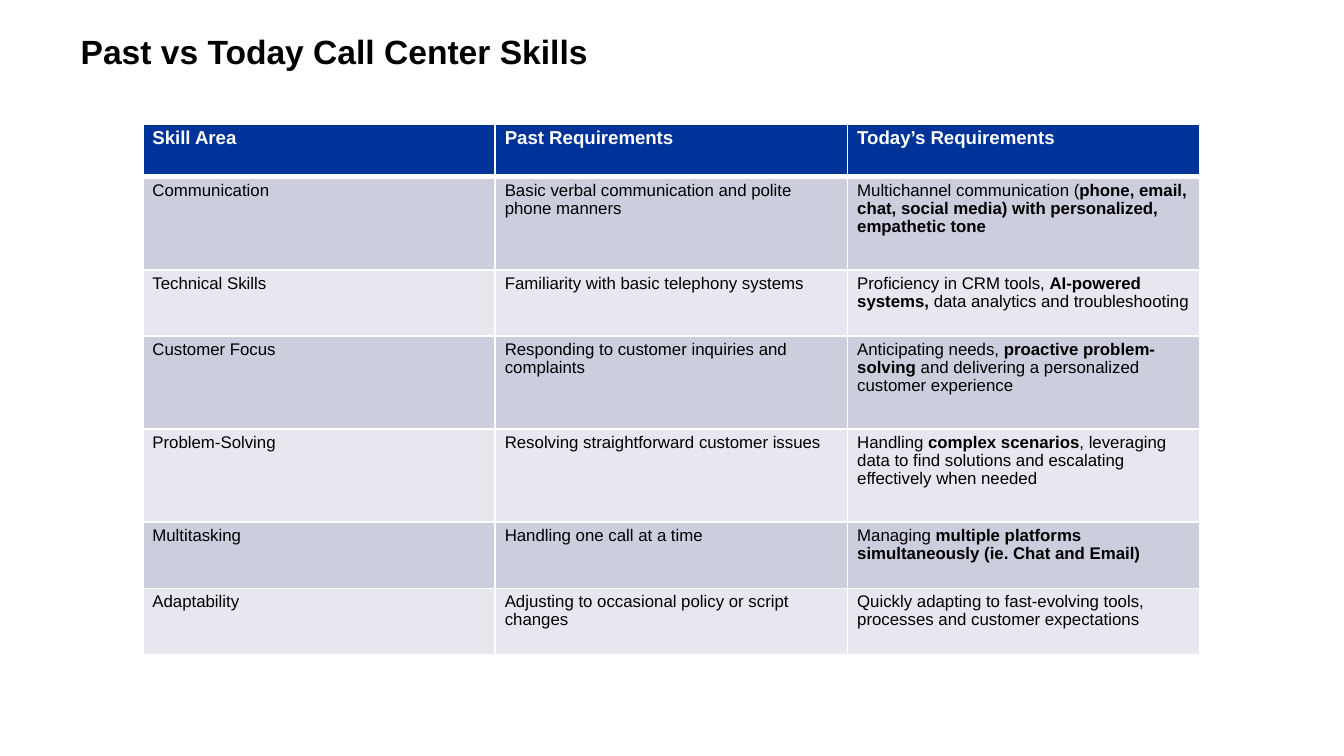
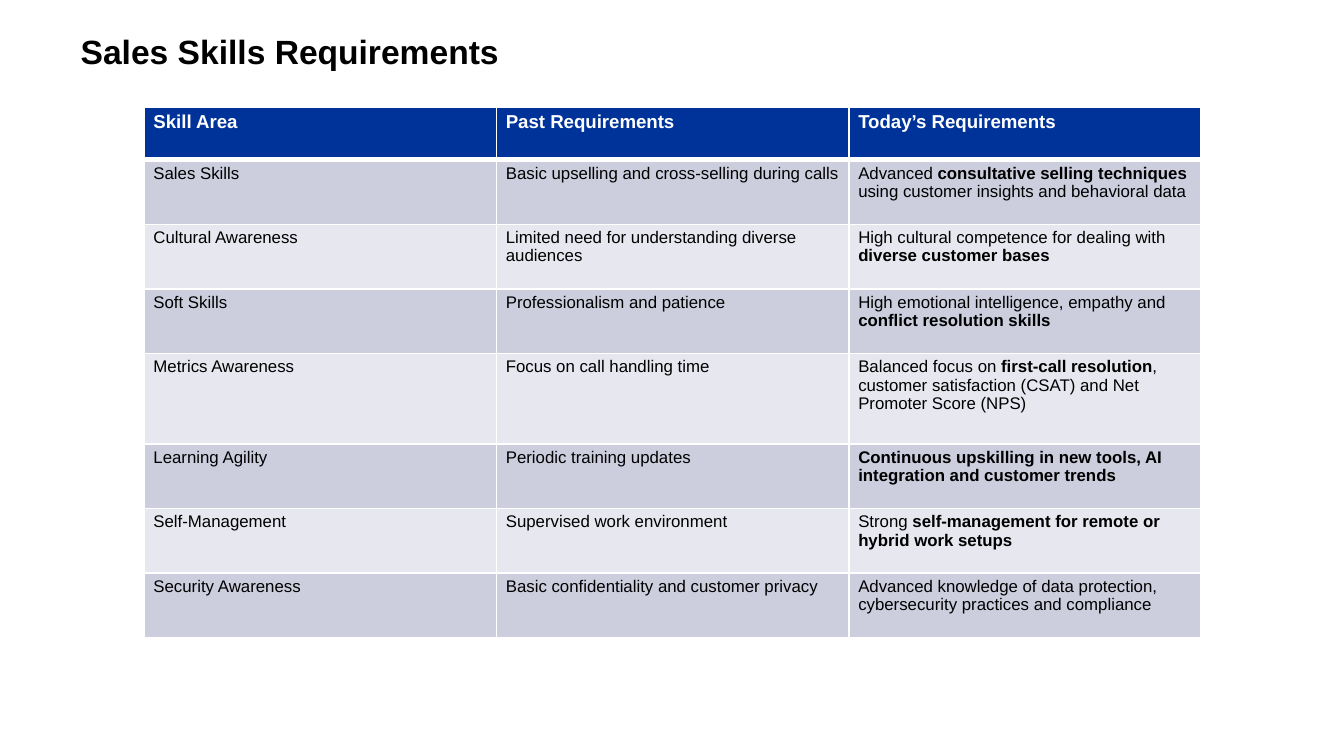
from lxml.etree import SubElement
from pptx import Presentation
from pptx.dml.color import RGBColor
from pptx.enum.text import MSO_ANCHOR, MSO_AUTO_SIZE, PP_ALIGN
from pptx.oxml.ns import qn
from pptx.util import Cm, Pt

FONT = "Arial"
BLACK, WHITE, NAVY = "000000", "FFFFFF", "003399"
BANDS = ("CCCEDE", "E7E8EF")
HEADINGS = ("Skill Area", "Past Requirements", "Today’s Requirements")
COLUMN_WIDTH = 6.66

CALL_CENTER_SKILLS = [
    ("Communication",
     "Basic verbal communication and polite phone manners",
     "Multichannel communication (**phone, email, chat, social media) "
     "with personalized, empathetic tone**"),
    ("Technical Skills",
     "Familiarity with basic telephony systems",
     "Proficiency in CRM tools, **AI-powered systems, **"
     "data analytics and troubleshooting"),
    ("Customer Focus",
     "Responding to customer inquiries and complaints",
     "Anticipating needs, **proactive problem-solving **"
     "and delivering a personalized customer experience"),
    ("Problem-Solving",
     "Resolving straightforward customer issues",
     "Handling **complex scenarios**, leveraging data to find solutions "
     "and escalating effectively when needed"),
    ("Multitasking",
     "Handling one call at a time",
     "Managing **multiple platforms simultaneously (ie. Chat and Email)**"),
    ("Adaptability",
     "Adjusting to occasional policy or script changes",
     "Quickly adapting to fast-evolving tools, processes "
     "and customer expectations"),
]

SALES_SKILLS = [
    ("Sales Skills",
     "Basic upselling and cross-selling during calls",
     "Advanced **consultative selling techniques **"
     "using customer insights and behavioral data"),
    ("Cultural Awareness",
     "Limited need for understanding diverse audiences",
     "High cultural competence for dealing with **diverse customer bases**"),
    ("Soft Skills",
     "Professionalism and patience",
     "High emotional intelligence, empathy and "
     "**conflict resolution skills**"),
    ("Metrics Awareness",
     "Focus on call handling time",
     "Balanced focus on **first-call resolution**, customer satisfaction "
     "(CSAT) and Net Promoter Score (NPS)"),
    ("Learning Agility",
     "Periodic training updates",
     "**Continuous upskilling in new tools, AI integration "
     "and customer trends**"),
    ("Self-Management",
     "Supervised work environment",
     "Strong **self-management for remote or hybrid work setups**"),
    ("Security Awareness",
     "Basic confidentiality and customer privacy",
     "Advanced knowledge of data protection, cybersecurity practices "
     "and compliance"),
]


def rgb(color):
    return RGBColor.from_string(color)


class SkillsDeck:
    def __init__(self):
        self.deck = Presentation()
        self.deck.slide_width = Cm(25.4)
        self.deck.slide_height = Cm(14.29)
        self.slide = None

    def add_slide(self, heading):
        self.slide = self.deck.slides.add_slide(self.deck.slide_layouts[5])
        title = self.slide.shapes.title
        title.left, title.top = Cm(1.27), Cm(0.46)
        title.width, title.height = Cm(22.86), Cm(1.57)
        frame = title.text_frame
        frame.word_wrap = True
        frame.auto_size = MSO_AUTO_SIZE.NONE
        frame.vertical_anchor = MSO_ANCHOR.TOP
        frame.paragraphs[0].alignment = PP_ALIGN.LEFT
        self.add_run(frame.paragraphs[0], heading, 18, BLACK, True)

    def add_run(self, paragraph, text, size, color, bold):
        run = paragraph.add_run()
        run.text = text
        run.font.name = FONT
        run.font.size = Pt(size)
        run.font.bold = bold
        run.font.color.rgb = rgb(color)

    def add_borders(self, cell, top, bottom):
        properties = cell._tc.get_or_add_tcPr()
        for side, width in (("L", 1), ("R", 1), ("T", top), ("B", bottom)):
            line = SubElement(properties, qn(f"a:ln{side}"), w=str(Pt(width)))
            fill = SubElement(line, qn("a:solidFill"))
            SubElement(fill, qn("a:srgbClr"), val=WHITE)

    def fill_cell(self, cell, text, row):
        header = row == 0
        self.add_borders(cell, 3 if row == 1 else 1, 3 if header else 1)
        cell.fill.solid()
        cell.fill.fore_color.rgb = rgb(NAVY if header else BANDS[(row - 1) % 2])
        cell.margin_left = cell.margin_right = Cm(0.18)
        cell.margin_top = cell.margin_bottom = Cm(0.09)
        cell.vertical_anchor = MSO_ANCHOR.TOP
        paragraph = cell.text_frame.paragraphs[0]
        paragraph.line_spacing = 0.97
        size, color = (10, WHITE) if header else (9, BLACK)
        for index, part in enumerate(text.split("**")):
            if part:
                self.add_run(paragraph, part, size, color, header or index % 2 == 1)

    def add_skills_table(self, left, top, skills, heights, tall_rows):
        header_height, short, tall = heights
        row_heights = [header_height] + [
            tall if skill[0] in tall_rows else short for skill in skills]
        table = self.slide.shapes.add_table(
            len(row_heights), len(HEADINGS), Cm(left), Cm(top),
            Cm(COLUMN_WIDTH * len(HEADINGS)), Cm(sum(row_heights))).table
        table.horz_banding = False
        for column in table.columns:
            column.width = Cm(COLUMN_WIDTH)
        for row, texts in enumerate([HEADINGS] + skills):
            table.rows[row].height = Cm(row_heights[row])
            for column, text in enumerate(texts):
                self.fill_cell(table.cell(row, column), text, row)


def main():
    skills_deck = SkillsDeck()
    skills_deck.add_slide("Past vs Today Call Center Skills")
    skills_deck.add_skills_table(
        2.7, 2.34, CALL_CENTER_SKILLS, (1.0, 1.25, 1.76),
        ("Communication", "Customer Focus", "Problem-Solving"))
    skills_deck.add_slide("Sales Skills Requirements")
    skills_deck.add_skills_table(
        2.72, 2.03, SALES_SKILLS, (0.99, 1.22, 1.71), ("Metrics Awareness",))
    skills_deck.deck.save("out.pptx")


if __name__ == "__main__":
    main()
